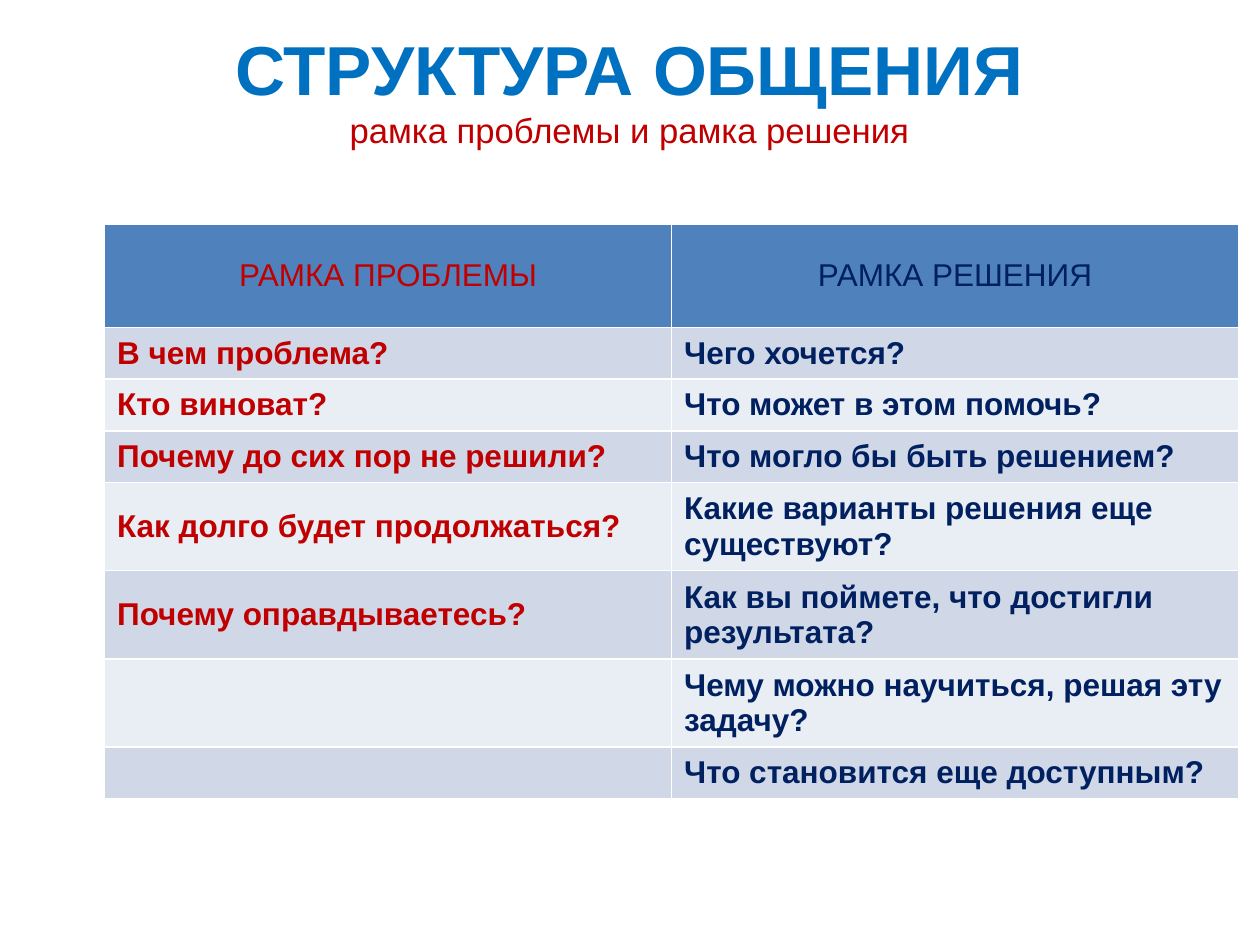
from pptx import Presentation
from pptx.dml.color import RGBColor
from pptx.enum.text import MSO_ANCHOR, PP_ALIGN
from pptx.util import Inches, Pt

FONT = "Arial"
BLUE, RED, NAVY = "0070C0", "C00000", "002060"
HEADER_FILL, BANDS = "4F81BD", ("E9EDF4", "D0D8E8")

HEADING = [("СТРУКТУРА ОБЩЕНИЯ", 39.6, BLUE, True),
           ("рамка проблемы и рамка решения", 19.8, RED, False)]
FRAMES = [
    ("РАМКА ПРОБЛЕМЫ", "РАМКА РЕШЕНИЯ"),
    ("В чем проблема?", "Чего хочется?"),
    ("Кто виноват?", "Что может в этом помочь?"),
    ("Почему до сих пор не решили?", "Что могло бы быть решением?"),
    ("Как долго будет продолжаться?", "Какие варианты решения еще существуют?"),
    ("Почему оправдываетесь?", "Как вы поймете, что достигли результата?"),
    ("", "Чему можно научиться, решая эту задачу?"),
    ("", "Что становится еще доступным?"),
]
COLUMN_COLORS = (RED, NAVY)
COLUMN_WIDTH, ROW_HEIGHT = 4.5, 0.41


def style(font, size, color, bold):
    font.name, font.size, font.bold = FONT, Pt(size), bold
    font.color.rgb = RGBColor.from_string(color)


def add_heading(page):
    box = page.shapes.add_textbox(Inches(1), Inches(0.43), Inches(7.99), Inches(0.54))
    frame = box.text_frame
    frame.word_wrap = True
    frame.vertical_anchor = MSO_ANCHOR.MIDDLE
    para = frame.paragraphs[0]
    para.text = "\v".join(line[0] for line in HEADING)
    para.alignment = PP_ALIGN.CENTER
    for span, (_, *look) in zip(para.runs, HEADING):
        style(span.font, *look)


def add_frames_table(page):
    columns = len(COLUMN_COLORS)
    table = page.shapes.add_table(
        len(FRAMES), columns, Inches(0.83), Inches(1.78),
        Inches(COLUMN_WIDTH * columns), Inches(ROW_HEIGHT * (len(FRAMES) + 1))).table
    for column in table.columns:
        column.width = Inches(COLUMN_WIDTH)
    for r, texts in enumerate(FRAMES):
        is_header = r == 0
        table.rows[r].height = Inches(ROW_HEIGHT * (2 if is_header else 1))
        for c, text in enumerate(texts):
            cell = table.cell(r, c)
            cell.fill.solid()
            cell.fill.fore_color.rgb = RGBColor.from_string(
                HEADER_FILL if is_header else BANDS[r % 2])
            cell.vertical_anchor = MSO_ANCHOR.MIDDLE
            para = cell.text_frame.paragraphs[0]
            para.text = text
            if is_header:
                para.alignment = PP_ALIGN.CENTER
            for span in para.runs:
                style(span.font, 18, COLUMN_COLORS[c], not is_header)


deck = Presentation()
deck.slide_width, deck.slide_height = Inches(10), Inches(7.5)
page = deck.slides.add_slide(deck.slide_layouts[6])
add_heading(page)
add_frames_table(page)
deck.save("out.pptx")
